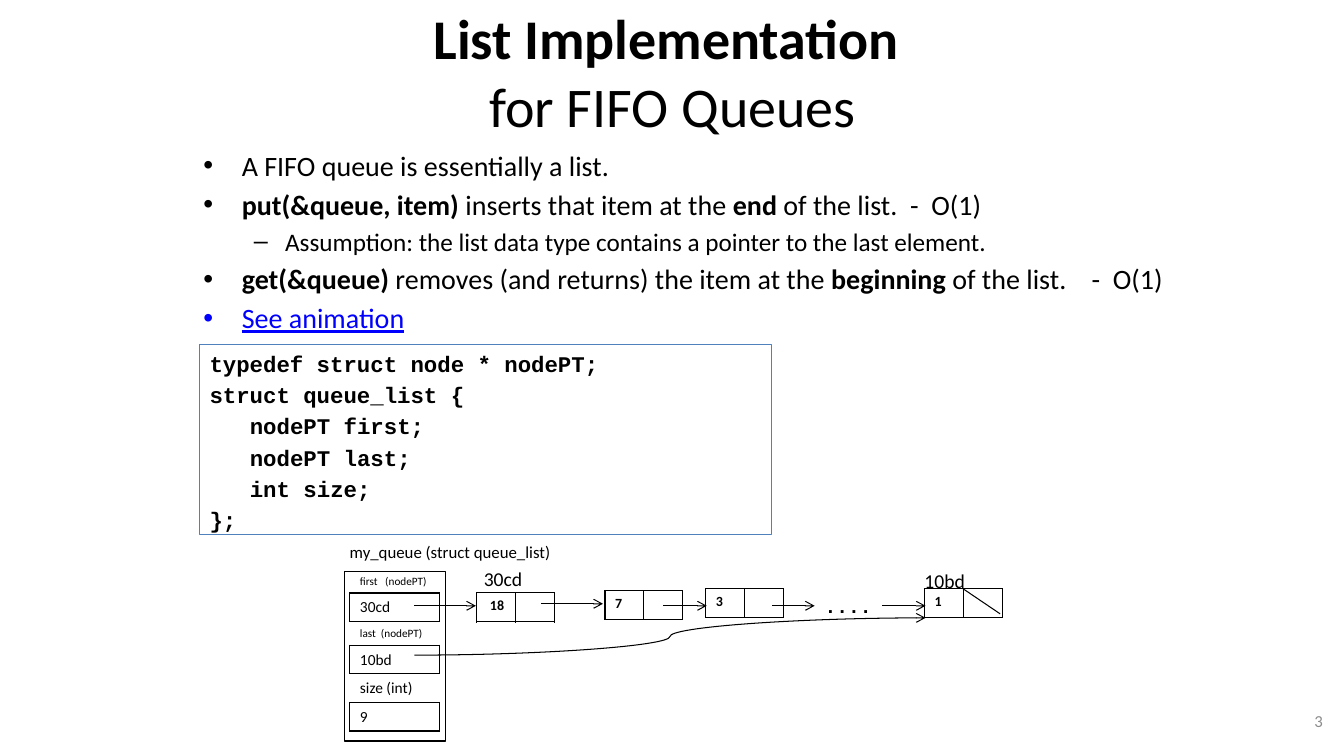
from lxml import etree
from pptx import Presentation
from pptx import util as u
from pptx.dml.color import RGBColor
from pptx.enum import shapes, text
from pptx.oxml import ns

COLORS = {"ink": "000000", "paper": "FFFFFF", "link": "0000FF",
          "frame": "4F81BD", "page": "8C8C8C"}
BOLD = {"bold": True}
CODE = {"name": "Courier New", "bold": True}
ALL = "LRTB"
BREAK = ("\n", {})


def put(obj, vals):
    """Set every attribute named in vals."""
    for key, val in vals.items():
        setattr(obj, key, val)


def sub(parent, tag, **attrs):
    return etree.SubElement(parent, ns.qn(tag), **attrs)


class Deck:
    """Holds the style and the current slide."""

    def __init__(self, font="Calibri"):
        self.prs = Presentation()
        put(self.prs, {"slide_width": u.Inches(13.33),
                       "slide_height": u.Inches(7.5)})
        self.slide = self.prs.slides.add_slide(self.prs.slide_layouts[6])
        self.font = font

    def rgb(self, key):
        return RGBColor.from_string(COLORS[key])

    def para(self, par, runs, size, color="ink", align="LEFT", before=0,
             indent=None, bullet=None, **base):
        """Fill a paragraph from a string or from (text, format) pairs."""
        put(par, {"alignment": getattr(text.PP_ALIGN, align),
                  "space_before": u.Pt(before)})
        props = par._p.get_or_add_pPr()
        if indent:
            left, first = indent
            props.set("marL", str(u.Inches(left)))
            props.set("indent", str(u.Inches(first)))
        if bullet:
            sub(props, "a:buFont", typeface="Arial")
            sub(props, "a:buChar", char=bullet)
        for part in [(runs, {})] if isinstance(runs, str) else runs:
            if part is BREAK:
                par.add_line_break()
                continue
            words, form = part
            run = par.add_run()
            run.text = words
            put(run.font, {"name": self.font, "size": u.Pt(size),
                           **base, **form})
            run.font.color.rgb = self.rgb(color)

    def fill(self, frame, paras, anchor="TOP", wrap=True):
        put(frame, {"word_wrap": wrap,
                    "vertical_anchor": getattr(text.MSO_ANCHOR, anchor)})
        for i, form in enumerate(paras):
            par = frame.add_paragraph() if i else frame.paragraphs[0]
            self.para(par, **form)

    def box(self, at, paras, **opts):
        shape = self.slide.shapes.add_textbox(*map(u.Inches, at))
        self.fill(shape.text_frame, paras, **opts)

    def rect(self, at, line, width=0.75, fill=None, paras=(), **opts):
        shape = self.slide.shapes.add_shape(
            shapes.MSO_SHAPE.RECTANGLE, *map(u.Inches, at))
        shape.shadow.inherit = False
        if fill:
            shape.fill.solid()
            shape.fill.fore_color.rgb = self.rgb(fill)
        else:
            shape.fill.background()
        shape.line.color.rgb = self.rgb(line)
        shape.line.width = u.Pt(width)
        self.fill(shape.text_frame, paras, **opts)

    def line(self, start, end, kind="STRAIGHT", head=True):
        link = self.slide.shapes.add_connector(
            getattr(shapes.MSO_CONNECTOR, kind),
            *map(u.Inches, (*start, *end)))
        link.line.color.rgb = self.rgb("ink")
        link.line.width = u.Pt(0.75)
        if head:
            sub(link.line._get_or_add_ln(), "a:tailEnd", type="arrow")
        sub(link._element.spPr, "a:effectLst")

    def edge(self, cell, sides):
        """Draw the given sides of a cell and clear the others."""
        props = cell._tc.get_or_add_tcPr()
        for i, side in enumerate(ALL):
            ln = etree.Element(ns.qn("a:ln" + side), w=str(u.Pt(1)))
            if side in sides:
                sub(sub(ln, "a:solidFill"), "a:srgbClr", val=COLORS["ink"])
            else:
                sub(ln, "a:noFill")
            props.insert(i, ln)

    def table(self, at, cols, rows):
        """Rows are (height, cells); a cell is (words, size, sides, pad, form)."""
        left, top, width = at
        high = sum(row[0] for row in rows)
        grid = self.slide.shapes.add_table(
            len(rows), cols, *map(u.Inches, (left, top, width, high))).table
        put(grid, {"first_row": False, "horz_banding": False})
        for col in grid.columns:
            col.width = u.Inches(width / cols)
        for r, (tall, cells) in enumerate(rows):
            grid.rows[r].height = u.Inches(tall)
            for c, (words, size, sides, pad, form) in enumerate(cells):
                cell = grid.cell(r, c)
                cell.margin_left = u.Inches(pad)
                cell.fill.background()
                self.edge(cell, sides)
                par = cell.text_frame.paragraphs[0]
                if words:
                    self.para(par, words, size, **form)
                else:
                    sub(par._p, "a:endParaRPr", sz=str(size * 100))

    def node(self, left, top, value, pad=0.1):
        """A list element: a value cell and an empty pointer cell."""
        self.table((left, top, 0.77), 2, [
            (0.29, [(word, 10, ALL, pad, BOLD) for word in (value, "")])])

    def record(self, at, fields):
        """Label rows without side borders above boxed value rows."""
        rows = []
        for i, (label, size, tall, value) in enumerate(fields):
            rows += [(tall, [(label, size, "TB" if i else "B", 0.1, {})]),
                     (0.28, [(value, 11, ALL, 0.1, {})])]
        self.table(at, 1, rows)


def main():
    deck = Deck()
    deck.box((1.67, 0.08, 10, 1.25), [
        {"runs": [("List Implementation ", BOLD), BREAK,
                  ("for FIFO Queues", {})],
         "size": 40, "align": "CENTER"}], anchor="MIDDLE")

    point = {"size": 20, "before": 4, "indent": (0.38, -0.38), "bullet": "•"}
    deck.box((1.92, 1.42, 10, 2.07), [
        {"runs": "A FIFO queue is essentially a list.", **point},
        {"runs": [("put(&queue, item)", BOLD),
                  (" inserts that item at the ", {}), ("end ", BOLD),
                  ("of the list.  -  O(1)", {})], **point},
        {"runs": "Assumption: the list data type contains a pointer "
                 "to the last element.",
         "size": 18, "before": 3.6, "indent": (0.81, -0.31), "bullet": "–"},
        {"runs": [("get(&queue)", BOLD),
                  (" removes (and returns) the item at the ", {}),
                  ("beginning ", BOLD),
                  ("of the list.    -  O(1)", {})], **point},
        {"runs": "See animation", "color": "link", "underline": True,
         **point}])
    deck.box((10.11, 6.95, 3.11, 0.4), [
        {"runs": "3", "size": 12, "color": "page", "align": "RIGHT"}],
        anchor="MIDDLE")

    code = [("typedef struct node * nodePT;", 0),
            ("struct queue_list {", 0), ("nodePT first;", 0.4),
            ("nodePT last;", 0.4), ("int size;", 0.4), ("};", 0)]
    deck.rect((1.98, 3.42, 5.67, 1.88), "frame", paras=[
        {"runs": words, "size": 16, "before": 3.2, "indent": (left, 0),
         **CODE} for words, left in code])

    deck.rect((3.42, 5.67, 1, 1.68), "ink", 1, "paper")
    deck.record((3.47, 5.65, 0.89), [
        ("first   (nodePT)", 8, 0.23, "30cd"),
        ("last  (nodePT)", 8, 0.23, "10bd"),
        ("size (int)", 11, 0.28, "9")])

    deck.node(4.73, 5.88, "18", 0.13)
    for left, top, value in [(6, 5.86, "7"), (7, 5.84, "3"),
                             (9.17, 5.84, "1")]:
        deck.node(left, top, value)
    deck.line((9.55, 5.84), (9.92, 6.09), head=False)

    deck.rect((8.08, 5.84, 0.79, 0.34), "paper", wrap=False, paras=[
        {"runs": "....", "size": 14, **CODE}])
    for at, words, size in [
            ((3.37, 5.33, 2.21, 0.3), "my_queue (struct queue_list)", 12),
            ((4.7, 5.58, 0.59, 0.34), "30cd", 14),
            ((9.07, 5.59, 0.61, 0.34), "10bd", 14)]:
        deck.box(at, [{"runs": words, "size": size}], wrap=False)

    for left, right, y in [(4.11, 4.72, 6.01), (5.37, 5.98, 5.99),
                           (6.58, 7.01, 6.01), (7.66, 8.08, 6.01),
                           (8.75, 9.18, 6.01)]:
        deck.line((left, y), (right, y))
    deck.line((4.11, 6.5), (9.18, 6.13), "CURVE")
    deck.prs.save("out.pptx")


if __name__ == "__main__":
    main()
